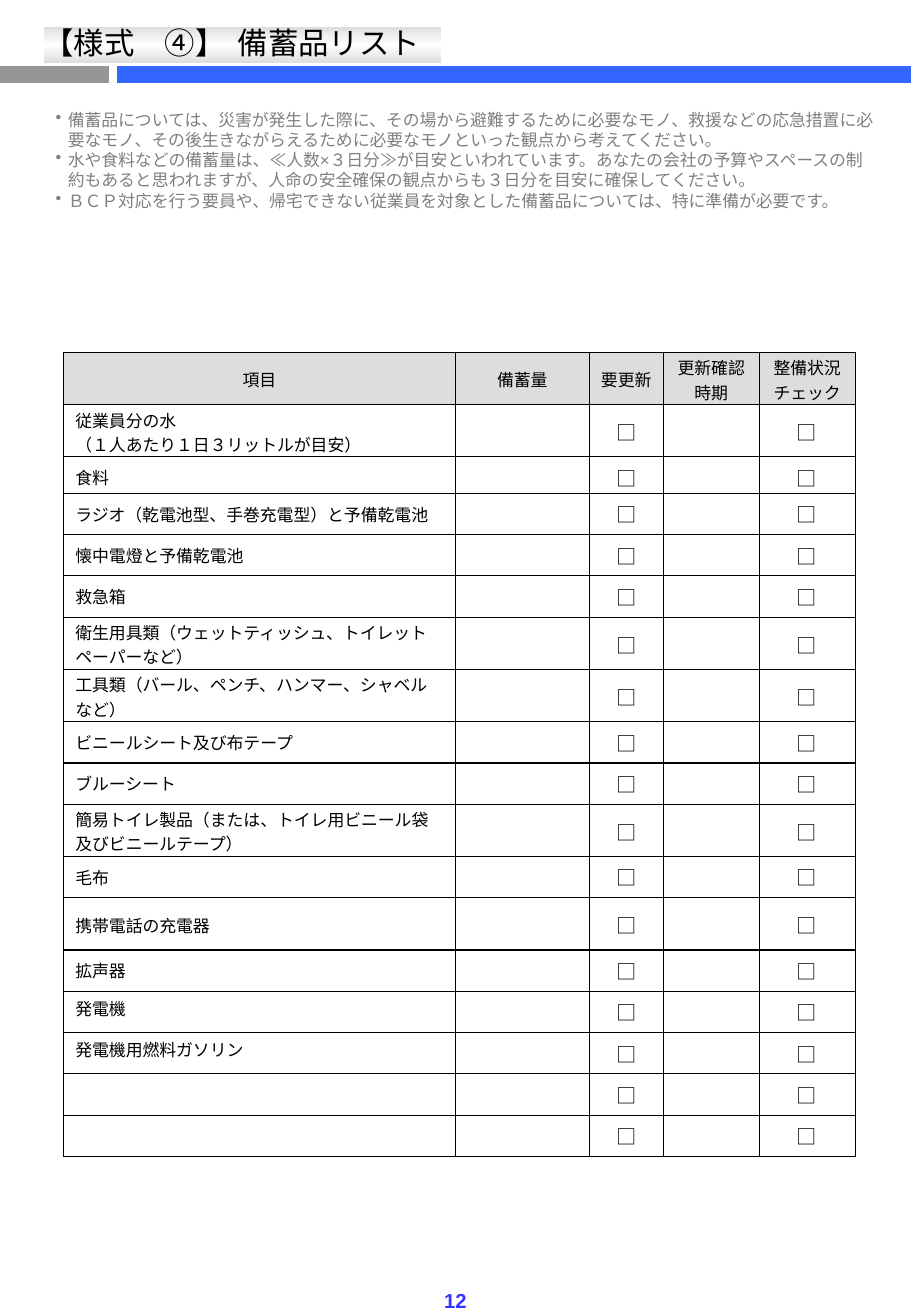
from copy import deepcopy

from lxml import etree
from pptx import Presentation
from pptx.dml.color import RGBColor
from pptx.enum.shapes import MSO_CONNECTOR, MSO_SHAPE
from pptx.enum.text import MSO_ANCHOR, PP_ALIGN
from pptx.oxml.ns import qn
from pptx.util import Inches, Pt

LEFT, CENTER = PP_ALIGN.LEFT, PP_ALIGN.CENTER
TOP, MIDDLE = MSO_ANCHOR.TOP, MSO_ANCHOR.MIDDLE
STRAIGHT, RECTANGLE = MSO_CONNECTOR.STRAIGHT, MSO_SHAPE.RECTANGLE

# Content
FORM_NUMBER = "【様式　④】"
TITLE = "備蓄品リスト"
PAGE_NUMBER = "12"
GUIDANCE = [
    "備蓄品については、災害が発生した際に、その場から避難するために必要なモノ、救援などの応急措置に必要なモノ、その後生きながらえるために必要なモノといった観点から考えてください。",
    "水や食料などの備蓄量は、≪人数×３日分≫が目安といわれています。あなたの会社の予算やスペースの制約もあると思われますが、人命の安全確保の観点からも３日分を目安に確保してください。",
    "ＢＣＰ対応を行う要員や、帰宅できない従業員を対象とした備蓄品については、特に準備が必要です。",
]
# Heading lines and column width
COLUMNS = [
    (["項目"], 3.23),
    (["備蓄量"], 1.1),
    (["要更新"], 0.61),
    (["更新確認", "時期"], 0.79),
    (["整備状況チェック"], 0.79),
]
CHECK_COLUMNS = (2, 4)
CHECK_BOX = "□"
TALL, REGULAR, LOW = 0.43, 0.34, 0.3
# Item lines, row height and anchor
SUPPLIES = [
    (["従業員分の水", "（１人あたり１日３リットルが目安）"], TALL, MIDDLE),
    (["食料"], LOW, MIDDLE),
    (["ラジオ（乾電池型、手巻充電型）と予備乾電池"], REGULAR, MIDDLE),
    (["懐中電燈と予備乾電池"], REGULAR, MIDDLE),
    (["救急箱"], REGULAR, MIDDLE),
    (["衛生用具類（ウェットティッシュ、トイレットペーパーなど）"], TALL, MIDDLE),
    (["工具類（バール、ペンチ、ハンマー、シャベルなど）"], TALL, MIDDLE),
    (["ビニールシート及び布テープ"], REGULAR, MIDDLE),
    (["ブルーシート"], REGULAR, MIDDLE),
    (["簡易トイレ製品（または、トイレ用ビニール袋及びビニールテープ）"], TALL, MIDDLE),
    (["毛布"], REGULAR, MIDDLE),
    (["携帯電話の充電器"], TALL, MIDDLE),
    (["拡声器"], REGULAR, MIDDLE),
    (["発電機"], REGULAR, TOP),
    (["発電機用燃料ガソリン"], REGULAR, TOP),
    ([""], REGULAR, MIDDLE),
    ([""], REGULAR, MIDDLE),
]

THEME = {
    "black": RGBColor.from_string("000000"),
    "white": RGBColor.from_string("FFFFFF"),
    "pale": RGBColor.from_string("DDDDDD"),
    "grey": RGBColor.from_string("969696"),
    "blue": RGBColor.from_string("3366FF"),
    "guidance": RGBColor.from_string("808080"),
    "page": RGBColor.from_string("3333FF"),
    "title_size": 18,
    "body_size": 10,
    "mark_size": 12,
    "font": "Arial",
    "table_font": "Noto Sans CJK JP",
}

deck = Presentation()
deck.slide_width, deck.slide_height = Inches(7.5), Inches(10.83)
slide = deck.slides.add_slide(deck.slide_layouts[6])


def write(frame, lines, size=THEME["body_size"], color=THEME["black"],
          font=THEME["font"], align=LEFT, bold=False, bullet=None):
    frame.word_wrap = True
    for index, line in enumerate(lines):
        paragraph = frame.paragraphs[0] if index == 0 else frame.add_paragraph()
        paragraph.alignment = align
        if bullet:
            props = paragraph._p.get_or_add_pPr()
            props.set("marL", str(Inches(0.1)))
            props.set("indent", str(-Inches(0.1)))
            etree.SubElement(props, qn("a:buChar"), char=bullet)
        if not line:
            etree.SubElement(paragraph._p, qn("a:endParaRPr"), sz=str(size * 100))
            continue
        run = paragraph.add_run()
        run.text = line
        run.font.size, run.font.bold = Pt(size), bold
        run.font.color.rgb, run.font.name = color, font
        etree.SubElement(run._r.get_or_add_rPr(), qn("a:ea"), typeface=font)


def add_text(left, top, width, height, lines, **style):
    box = slide.shapes.add_textbox(*map(Inches, (left, top, width, height)))
    write(box.text_frame, lines, **style)


def add_rule(start, end, color):
    y = Inches(0.61)
    rule = slide.shapes.add_connector(STRAIGHT, Inches(start), y, Inches(end), y)
    rule.line.color.rgb, rule.line.width = color, Pt(10)
    etree.SubElement(rule._element.spPr, qn("a:effectLst"))


def fill_cell(cell, lines, row_height, anchor=MIDDLE, side=0.1, fill=None, **style):
    tall = row_height == TALL
    cell.margin_left = cell.margin_right = Inches(side)
    cell.margin_top = Inches(0.02 if tall else 0.04)
    cell.margin_bottom = Inches(0 if tall or row_height == LOW else 0.04)
    cell.vertical_anchor = anchor
    props = cell._tc.get_or_add_tcPr()
    for edge in ("lnL", "lnR", "lnT", "lnB"):
        border = etree.SubElement(props, qn(f"a:{edge}"), w=str(Pt(0.75)))
        solid = etree.SubElement(border, qn("a:solidFill"))
        etree.SubElement(solid, qn("a:srgbClr"), val=str(THEME["black"]))
    if fill is None:
        cell.fill.background()
    else:
        cell.fill.solid()
        cell.fill.fore_color.rgb = fill
    write(cell.text_frame, lines, font=THEME["table_font"], **style)


# Header rules and title band
add_rule(0, 0.9, THEME["grey"])
add_rule(0.96, 7.5, THEME["blue"])

band = slide.shapes.add_shape(RECTANGLE, Inches(0.36), Inches(0.22), Inches(3.27), Inches(0.3))
band.shadow.inherit = False
band.line.fill.background()
band.fill.gradient()
band.fill.gradient_angle = 90
stop_list = band._element.spPr.find(".//" + qn("a:gsLst"))
stop_list.append(deepcopy(stop_list[-1]))
band_stops = [(0, THEME["pale"]), (0.5, THEME["white"]), (1, THEME["pale"])]
for stop, (position, color) in zip(band.fill.gradient_stops, band_stops):
    stop.position, stop.color.rgb = position, color

add_text(1.86, 0.15, 1.8, 0.4, [TITLE], size=THEME["title_size"])
add_text(0.26, 0.15, 1.95, 0.4, [FORM_NUMBER], size=THEME["title_size"])

# Supplies table
row_heights = [TALL] + [height for _, height, _ in SUPPLIES]
widths = [width for _, width in COLUMNS]
supplies = slide.shapes.add_table(
    len(row_heights), len(COLUMNS), Inches(0.52), Inches(2.9),
    Inches(sum(widths)), Inches(sum(row_heights))).table
supplies.first_row = supplies.horz_banding = False
for row, height in zip(supplies.rows, row_heights):
    row.height = Inches(height)
for column, (heading, width) in enumerate(COLUMNS):
    supplies.columns[column].width = Inches(width)
    fill_cell(supplies.cell(0, column), heading, TALL, side=0.08,
              fill=THEME["pale"], align=CENTER)
for row, (item, height, anchor) in enumerate(SUPPLIES, start=1):
    fill_cell(supplies.cell(row, 0), item, height, anchor)
    for column in range(1, len(COLUMNS)):
        mark = CHECK_BOX if column in CHECK_COLUMNS else ""
        fill_cell(supplies.cell(row, column), [mark], height,
                  size=THEME["mark_size"], align=CENTER)

# Page number and guidance
add_text(3.51, 10.55, 0.48, 0.3, [PAGE_NUMBER], size=THEME["mark_size"],
         color=THEME["page"], align=CENTER, bold=True)
add_text(0.36, 0.85, 6.93, 0.94, GUIDANCE, color=THEME["guidance"], bullet="•")

deck.save("out.pptx")
